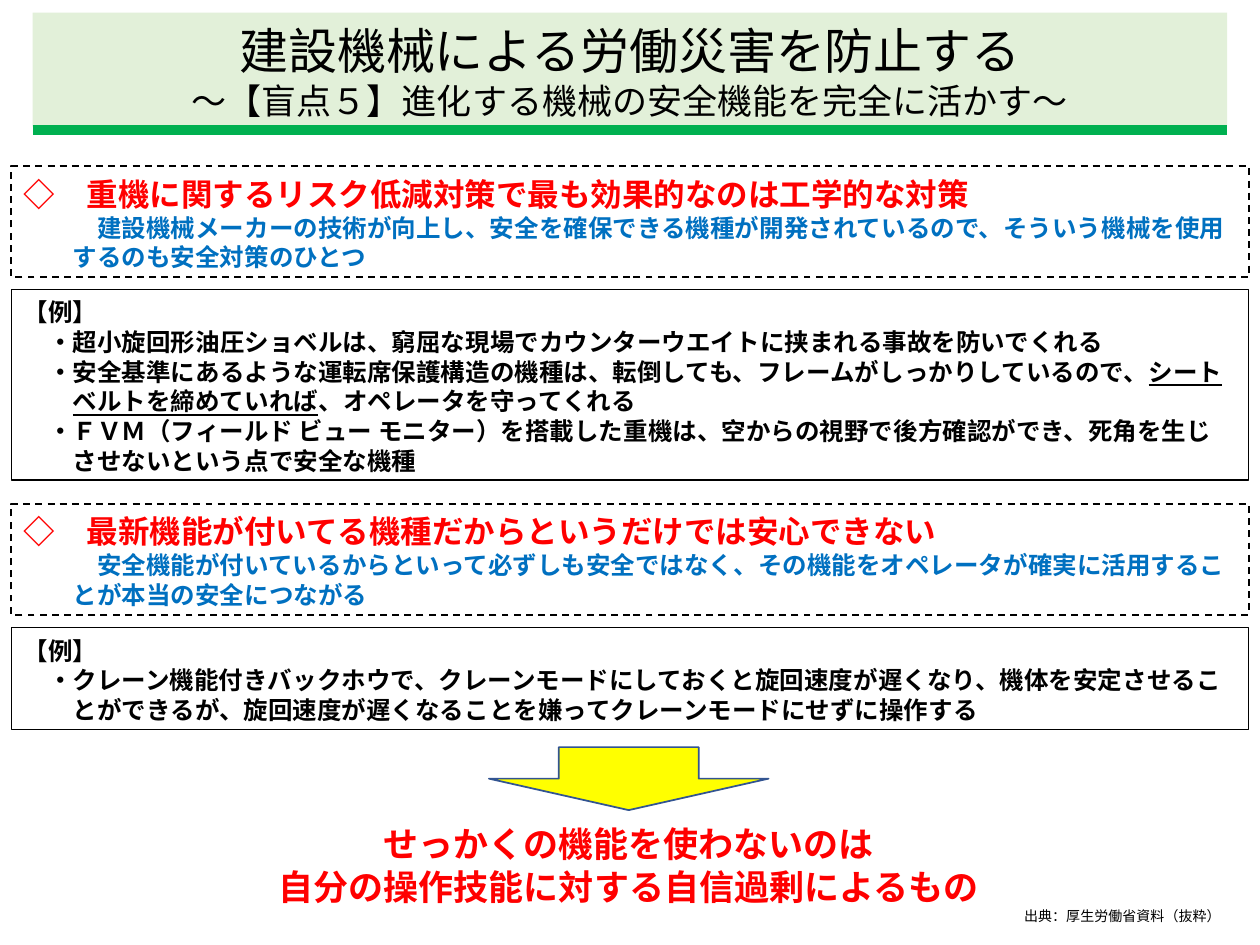
from dataclasses import dataclass

from lxml import etree
from pptx import Presentation
from pptx.dml.color import RGBColor
from pptx.enum.dml import MSO_LINE
from pptx.enum.shapes import MSO_CONNECTOR, MSO_SHAPE
from pptx.enum.text import MSO_ANCHOR, MSO_AUTO_SIZE, PP_ALIGN
from pptx.oxml.ns import qn
from pptx.util import Inches, Pt

RECT, ARROW = MSO_SHAPE.RECTANGLE, MSO_SHAPE.DOWN_ARROW
STRAIGHT, DASH = MSO_CONNECTOR.STRAIGHT, MSO_LINE.DASH
LEFT, CENTER = PP_ALIGN.LEFT, PP_ALIGN.CENTER
MIDDLE, NO_FIT = MSO_ANCHOR.MIDDLE, MSO_AUTO_SIZE.NONE

FONT = "Noto Sans CJK JP"
LEADING = 1.21
EM = 14 / 72  # one full-width character of body text, in inches
COLORS = {
    "black": "000000", "red": "FF0000", "blue": "0070C0", "pale": "E2F0D9",
    "green": "00B050", "yellow": "FFFF00", "navy": "325491",
}


@dataclass
class Para:
    """A paragraph: "\\n" breaks a line, "_" switches underline on and off."""
    text: str
    size: float = 14
    color: str = "black"
    bold: bool = True
    align: PP_ALIGN = LEFT
    margin: float = 0
    indent: float = 0


@dataclass
class Panel:
    top: float
    height: float
    paras: list[Para]
    dashed: bool = False


def rgb(name: str) -> RGBColor:
    return RGBColor.from_string(COLORS[name])


def head(text: str) -> Para:
    return Para(text, 18, "red")


def note(text: str) -> Para:
    return Para(text, color="blue", margin=2 * EM, indent=EM)


def item(text: str) -> Para:
    return Para("・" + text, margin=2 * EM, indent=-EM)


def style(par, data: Para) -> None:
    par.alignment = data.align
    par.line_spacing = Pt(round(data.size * LEADING, 2))
    font = par.font
    font.size, font.bold, font.name = Pt(data.size), data.bold, FONT
    font.color.rgb = rgb(data.color)
    props = par._p.get_or_add_pPr()
    props.set("marL", str(Inches(data.margin)))
    props.set("indent", str(Inches(data.indent)))
    east = etree.SubElement(props.find(qn("a:defRPr")), qn("a:ea"))
    east.set("typeface", FONT)


def write(shape, paras: list[Para]) -> None:
    frame = shape.text_frame
    frame.word_wrap, frame.auto_size = True, NO_FIT
    frame.vertical_anchor = MIDDLE
    frame.margin_left = frame.margin_right = Inches(0.1)
    frame.margin_top, frame.margin_bottom = Inches(0.06), Inches(0.04)
    for i, data in enumerate(paras):
        par = frame.add_paragraph() if i else frame.paragraphs[0]
        style(par, data)
        for j, part in enumerate(data.text.split("_")):
            for k, line in enumerate(part.split("\n")):
                if k:
                    par.add_line_break()
                if line:
                    run = par.add_run()
                    run.text = line
                    if j % 2:
                        run.font.underline = True


def add_panel(slide, panel: Panel) -> None:
    box = slide.shapes.add_shape(
        RECT, Inches(0.09), Inches(panel.top), Inches(9.82), Inches(panel.height))
    box.shadow.inherit = False
    box.fill.background()
    box.line.color.rgb = rgb("black")
    box.line.width = Pt(1 if panel.dashed else 0.75)
    if panel.dashed:
        box.line.dash_style = DASH
    write(box, panel.paras)


def add_title(slide) -> None:
    title = slide.shapes.title
    title.left, title.top = Inches(0.26), Inches(0.1)
    title.width, title.height = Inches(9.48), Inches(0.91)
    title.fill.solid()
    title.fill.fore_color.rgb = rgb("pale")
    write(title, [
        Para("建設機械による労働災害を防止する", 28, bold=False, align=CENTER),
        Para("～【盲点５】進化する機械の安全機能を完全に活かす～", 20,
             bold=False, align=CENTER),
    ])
    rule = slide.shapes.add_connector(
        STRAIGHT, Inches(0.26), Inches(1.03), Inches(9.74), Inches(1.03))
    rule.line.color.rgb = rgb("green")
    rule.line.width = Pt(5.5)
    etree.SubElement(rule._element.spPr, qn("a:effectLst"))


def add_arrow(slide) -> None:
    arrow = slide.shapes.add_shape(
        ARROW, Inches(3.88), Inches(5.93), Inches(2.22), Inches(0.5))
    arrow.shadow.inherit = False
    arrow.fill.solid()
    arrow.fill.fore_color.rgb = rgb("yellow")
    arrow.line.color.rgb = rgb("navy")
    arrow.line.width = Pt(1)


def add_text(slide, left: float, top: float, width: float, height: float,
             paras: list[Para]) -> None:
    box = slide.shapes.add_textbox(
        Inches(left), Inches(top), Inches(width), Inches(height))
    write(box, paras)


PANELS = [
    Panel(1.32, 0.88, [
        head("◇　重機に関するリスク低減対策で最も効果的なのは工学的な対策"),
        note("建設機械メーカーの技術が向上し、安全を確保できる機種が開発されているので、"
             "そういう機械を使用\nするのも安全対策のひとつ"),
    ], dashed=True),
    Panel(2.3, 1.51, [
        Para("【例】"),
        item("超小旋回形油圧ショベルは、窮屈な現場でカウンターウエイトに挟まれる事故を防いでくれる"),
        item("安全基準にあるような運転席保護構造の機種は、転倒しても、フレームがしっかりしているので、"
             "_シート\nベルトを締めていれば_、オペレータを守ってくれる"),
        item("ＦＶＭ（フィールド ビュー モニター）を搭載した重機は、空からの視野で後方確認ができ、"
             "死角を生じ\nさせないという点で安全な機種"),
    ]),
    Panel(4, 0.88, [
        head("◇　最新機能が付いてる機種だからというだけでは安心できない"),
        note("安全機能が付いているからといって必ずしも安全ではなく、"
             "その機能をオペレータが確実に活用するこ\nとが本当の安全につながる"),
    ], dashed=True),
    Panel(4.98, 0.81, [
        Para("【例】"),
        item("クレーン機能付きバックホウで、クレーンモードにしておくと旋回速度が遅くなり、"
             "機体を安定させるこ\nとができるが、旋回速度が遅くなることを嫌って"
             "クレーンモードにせずに操作する"),
    ]),
]


def main() -> None:
    deck = Presentation()
    deck.slide_width, deck.slide_height = Inches(10), Inches(7.5)
    slide = deck.slides.add_slide(deck.slide_layouts[5])
    add_title(slide)
    for panel in PANELS:
        add_panel(slide, panel)
    add_arrow(slide)
    add_text(slide, 1.79, 6.47, 6.4, 0.77, [
        Para(line, 20, "red", align=CENTER)
        for line in ("せっかくの機能を使わないのは",
                     "自分の操作技能に対する自信過剰によるもの")
    ])
    add_text(slide, 8.03, 7.14, 1.87, 0.24,
             [Para("出典：厚生労働省資料（抜粋）", 8, bold=False)])
    deck.save("out.pptx")


if __name__ == "__main__":
    main()
